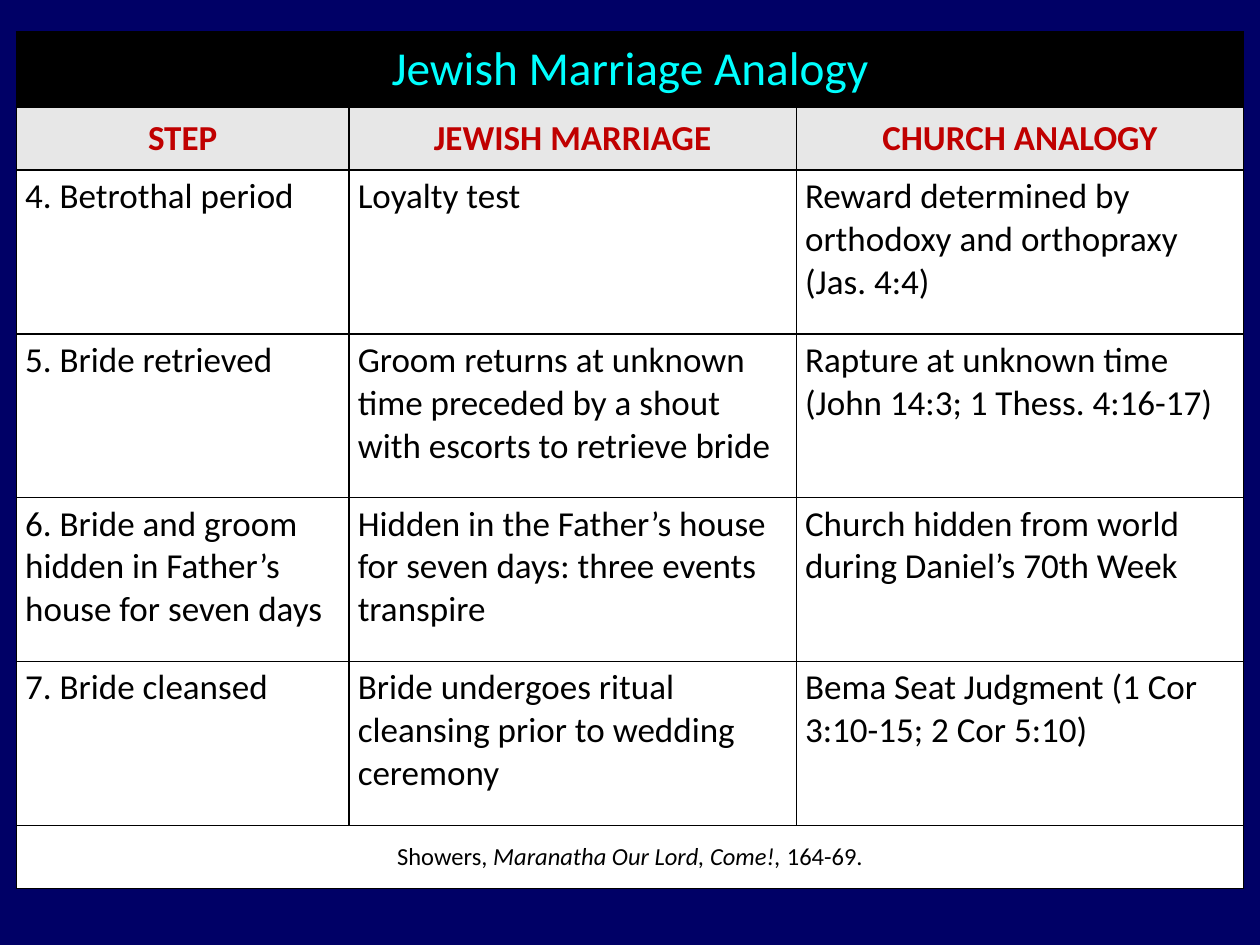
import lxml.etree
import pptx
import pptx.dml.color
import pptx.enum.text
import pptx.oxml.ns
import pptx.util

Inches = pptx.util.Inches
ALIGN = pptx.enum.text.PP_ALIGN
ANCHOR = pptx.enum.text.MSO_ANCHOR

COL_WIDTHS = [2.64, 3.55, 3.55]
ROW_HEIGHTS = [0.6, 0.5, 1.3, 1.3, 1.3, 1.3, 0.5]

TITLE = "Jewish Marriage Analogy"
HEADINGS = ["STEP", "JEWISH MARRIAGE", "CHURCH ANALOGY"]
STEPS = [
    ["4. Betrothal period",
     "Loyalty test",
     "Reward determined by orthodoxy and orthopraxy (Jas. 4:4)"],
    ["5. Bride retrieved",
     "Groom returns at unknown time preceded by a shout with escorts to retrieve bride",
     "Rapture at unknown time (John 14:3; 1 Thess. 4:16-17)"],
    ["6. Bride and groom hidden in Father’s house for seven days",
     "Hidden in the Father’s house for seven days: three events transpire",
     "Church hidden from world during Daniel’s 70th Week"],
    ["7. Bride cleansed",
     "Bride undergoes ritual cleansing prior to wedding ceremony",
     "Bema Seat Judgment (1 Cor 3:10-15; 2 Cor 5:10)"],
]
SOURCE = [("Showers, ", False), ("Maranatha Our Lord, Come!, ", True), ("164-69.", False)]

CENTERED = {"align": ALIGN.CENTER, "anchor": ANCHOR.MIDDLE}
TITLE_STYLE = {"fill": "000000", "color": "00FFFF", "size": 27, **CENTERED}
HEADING_STYLE = {"fill": "E7E7E7", "color": "C00000", "size": 20, "bold": True, **CENTERED}
BODY_STYLE = {"fill": "FFFFFF", "color": "000000", "size": 20,
              "align": ALIGN.LEFT, "anchor": ANCHOR.TOP}
SOURCE_STYLE = {**BODY_STYLE, "size": 14, **CENTERED}


def set_color(fill, color):
    fill.solid()
    fill.fore_color.rgb = pptx.dml.color.RGBColor.from_string(color)


def set_borders(cell, color="000000", width=1):
    tc_pr = cell._tc.get_or_add_tcPr()
    qn = pptx.oxml.ns.qn
    for i, side in enumerate(("lnL", "lnR", "lnT", "lnB")):
        ln = lxml.etree.Element(qn(f"a:{side}"), w=str(pptx.util.Pt(width)))
        fill = lxml.etree.SubElement(ln, qn("a:solidFill"))
        lxml.etree.SubElement(fill, qn("a:srgbClr"), val=color)
        tc_pr.insert(i, ln)


def fill_cell(cell, runs, style):
    """Write (text, italic) runs into a cell and style it."""
    set_color(cell.fill, style["fill"])
    margins = {"margin_left": 0.07, "margin_right": 0.07,
               "margin_top": 0.04, "margin_bottom": 0.04}
    for name, value in margins.items():
        setattr(cell, name, Inches(value))
    cell.vertical_anchor = style["anchor"]
    p = cell.text_frame.paragraphs[0]
    p.alignment = style["align"]
    font_values = {"name": "Calibri", "size": pptx.util.Pt(style["size"]),
                   "bold": style.get("bold", False)}
    for text, italic in runs:
        r = p.add_run()
        r.text = text
        for name, value in font_values.items():
            setattr(r.font, name, value)
        r.font.italic = italic
        set_color(r.font.fill, style["color"])


def add_analogy_table(s, left, top, width, height):
    rows, cols = len(ROW_HEIGHTS), len(COL_WIDTHS)
    table = s.shapes.add_table(rows, cols, left, top, width, height).table
    table.first_row = table.horz_banding = False
    for col, share in zip(table.columns, COL_WIDTHS):
        col.width = int(width * share / sum(COL_WIDTHS))
    for row, share in zip(table.rows, ROW_HEIGHTS):
        row.height = int(height * share / sum(ROW_HEIGHTS))
    for cell in table.iter_cells():
        set_borders(cell)

    for i in (0, rows - 1):
        table.cell(i, 0).merge(table.cell(i, cols - 1))
    fill_cell(table.cell(0, 0), [(TITLE, False)], TITLE_STYLE)
    fill_cell(table.cell(rows - 1, 0), SOURCE, SOURCE_STYLE)
    for i, texts in enumerate([HEADINGS] + STEPS, start=1):
        style = HEADING_STYLE if i == 1 else BODY_STYLE
        for j, text in enumerate(texts):
            fill_cell(table.cell(i, j), [(text, False)], style)


def main():
    prs = pptx.Presentation()
    prs.slide_width, prs.slide_height = Inches(10), Inches(7.5)
    s = prs.slides.add_slide(prs.slide_layouts.get_by_name("Blank"))
    set_color(s.background.fill, "000066")
    add_analogy_table(s, Inches(0.13), Inches(0.25), Inches(9.74), Inches(6.8))
    prs.save("out.pptx")


if __name__ == "__main__":
    main()
